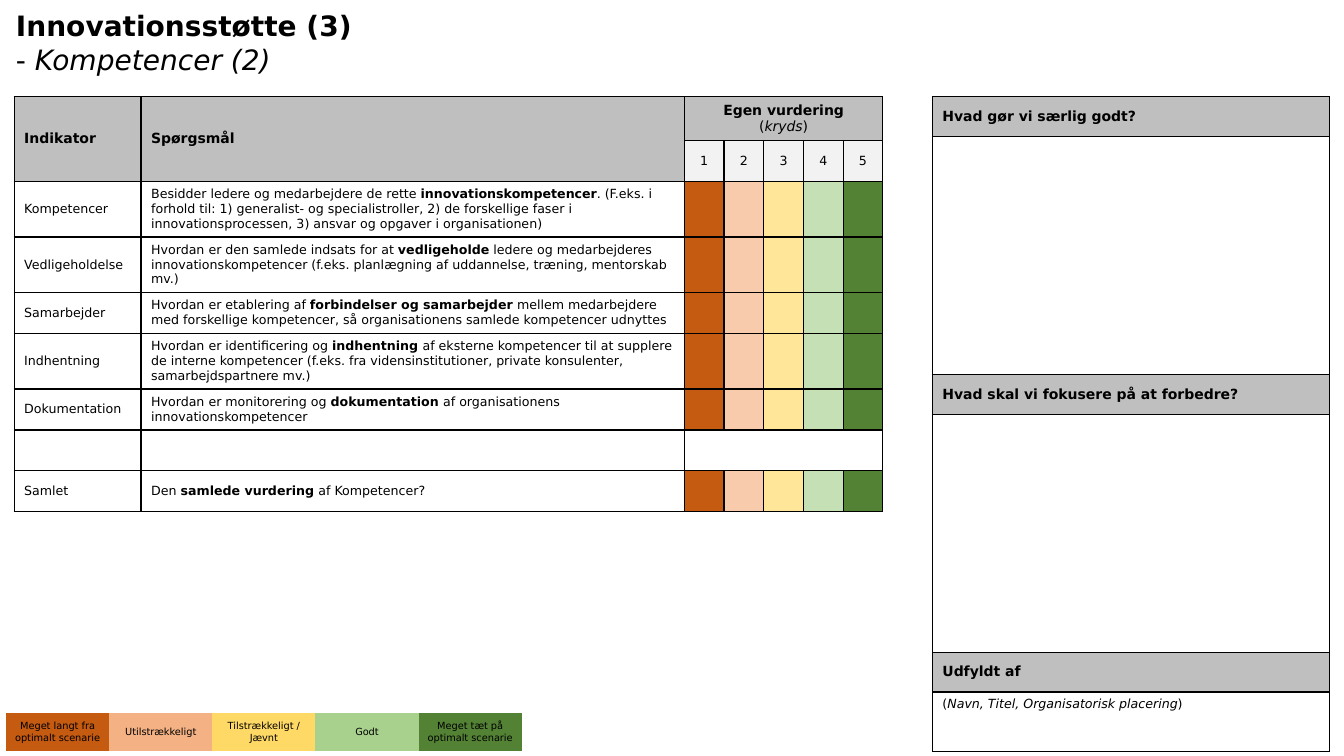
from dataclasses import dataclass

from lxml.etree import SubElement
from pptx import Presentation
from pptx.dml.color import RGBColor
from pptx.enum.text import MSO_ANCHOR, MSO_AUTO_SIZE, PP_ALIGN
from pptx.oxml.ns import qn
from pptx.util import Pt


@dataclass(frozen=True)
class Theme:
    font: str = "DejaVu Sans"
    ink: str = "000000"
    heading: str = "BFBFBF"
    scale: str = "F2F2F2"
    ratings: tuple = ("C55A11", "F8CBAD", "FFE699", "C5E0B4", "548235")
    legend: tuple = ("C55A11", "F4B183", "FFD966", "A9D18E", "548235")
    title_size: int = 20
    heading_size: int = 10
    body_size: int = 9
    legend_size: int = 7


theme = Theme()


def write(frame, text, size=theme.body_size, align=PP_ALIGN.LEFT):
    """Fill a text frame; *...* is bold, _..._ is italic, a newline starts a paragraph."""
    for number, line in enumerate(text.split("\n")):
        paragraph = frame.add_paragraph() if number else frame.paragraphs[0]
        paragraph.alignment = align
        for b, chunk in enumerate(line.split("*")):
            for i, piece in enumerate(chunk.split("_")):
                if not piece:
                    continue
                run = paragraph.add_run()
                run.text = piece
                run.font.name = theme.font
                run.font.size = Pt(size)
                run.font.bold = b % 2 == 1
                run.font.italic = i % 2 == 1
                run.font.color.rgb = RGBColor.from_string(theme.ink)


def add_grid(left, top, widths, heights, fills, sides_of):
    """Add a table; sides_of(row, column) names the cell sides (L, R, T, B) that are ruled."""
    grid = slide.shapes.add_table(len(heights), len(widths), Pt(left), Pt(top),
                                  Pt(sum(widths)), Pt(sum(heights))).table
    grid.first_row = grid.horz_banding = False
    for column, width in zip(grid.columns, widths):
        column.width = Pt(width)
    for r, height in enumerate(heights):
        grid.rows[r].height = Pt(height)
        for c in range(len(widths)):
            cell = grid.cell(r, c)
            cell.vertical_anchor = MSO_ANCHOR.MIDDLE
            properties = cell._tc.get_or_add_tcPr()
            for side in "LRTB":
                rule = SubElement(properties, qn(f"a:ln{side}"), w=str(Pt(1)))
                if side in sides_of(r, c):
                    paint = SubElement(rule, qn("a:solidFill"))
                    SubElement(paint, qn("a:srgbClr"), val=theme.ink)
                else:
                    SubElement(rule, qn("a:noFill"))
            if fills[r][c]:
                cell.fill.solid()
                cell.fill.fore_color.rgb = RGBColor.from_string(fills[r][c])
            else:
                cell.fill.background()
    return grid


deck = Presentation()
deck.slide_width, deck.slide_height = Pt(960), Pt(540)
slide = deck.slides.add_slide(deck.slide_layouts[6])

# Title
title = slide.shapes.add_textbox(Pt(4.3), Pt(2.9), Pt(714.6), Pt(55.4)).text_frame
title.word_wrap = True
title.auto_size = MSO_AUTO_SIZE.SHAPE_TO_FIT_TEXT
write(title, "*Innovationsstøtte (3)*\n- _Kompetencer (2)_", size=theme.title_size)

# Assessment table
indicators = [
    ("Kompetencer",
     "Besidder ledere og medarbejdere de rette *innovationskompetencer*. (F.eks. i forhold "
     "til: 1) generalist- og specialistroller, 2) de forskellige faser i "
     "innovationsprocessen, 3) ansvar og opgaver i organisationen)"),
    ("Vedligeholdelse",
     "Hvordan er den samlede indsats for at *vedligeholde* ledere og medarbejderes "
     "innovationskompetencer (f.eks. planlægning af uddannelse, træning, mentorskab mv.)"),
    ("Samarbejder",
     "Hvordan er etablering af *forbindelser og samarbejder *mellem medarbejdere med "
     "forskellige kompetencer, så organisationens samlede kompetencer udnyttes"),
    ("Indhentning",
     "Hvordan er identificering og *indhentning *af eksterne kompetencer til at "
     "supplere de interne kompetencer (f.eks. fra vidensinstitutioner, private "
     "konsulenter, samarbejdspartnere mv.)"),
    ("Dokumentation",
     "Hvordan er monitorering og *dokumentation *af organisationens "
     "innovationskompetencer"),
    None,
    ("Samlet", "Den *samlede vurdering *af Kompetencer?"),
]
gap_row = 2 + indicators.index(None)
assessment_fills = [[theme.heading] * 7, [theme.heading] * 2 + [theme.scale] * 5]
for indicator in indicators:
    assessment_fills.append([None, None, *(theme.ratings if indicator else [None] * 5)])


def assessment_sides(r, c):
    if r != gap_row or c < 2:
        return "LRTB"
    return "TB" + {2: "L", 6: "R"}.get(c, "")


assessment = add_grid(10.1, 69.1, [90.7, 388.1] + [28.35] * 5, [28.35] + [29.2] * 8,
                      assessment_fills, assessment_sides)
for c, heading in enumerate(["*Indikator*", "*Spørgsmål*"]):
    assessment.cell(0, c).merge(assessment.cell(1, c))
    write(assessment.cell(0, c).text_frame, heading, size=theme.heading_size)
assessment.cell(0, 2).merge(assessment.cell(0, 6))
write(assessment.cell(0, 2).text_frame, "*Egen vurdering*\n(_kryds_)",
      size=theme.heading_size, align=PP_ALIGN.CENTER)
for score in range(1, 6):
    write(assessment.cell(1, score + 1).text_frame, str(score), align=PP_ALIGN.CENTER)
for r, indicator in enumerate(indicators, start=2):
    for c, wording in enumerate(indicator or ()):
        write(assessment.cell(r, c).text_frame, wording)

# Reflection column
reflections = ["*Hvad gør vi særlig godt?*", "*Hvad skal vi fokusere på at forbedre?*",
               "*Udfyldt af*"]
reflection = add_grid(666, 69.1, [283.5], [28.35, 170.1, 28.35, 170.1, 28.35, 42.5],
                      [[theme.heading], [None]] * 3, lambda r, c: "LRTB")
for number, heading in enumerate(reflections):
    write(reflection.cell(2 * number, 0).text_frame, heading, size=theme.heading_size)
signature = reflection.cell(5, 0)
signature.vertical_anchor = MSO_ANCHOR.TOP
write(signature.text_frame, "(_Navn, Titel, Organisatorisk placering_)")

# Legend of the rating scale
meanings = ["Meget langt fra optimalt scenarie", "Utilstrækkeligt", "Tilstrækkeligt / Jævnt",
            "Godt", "Meget tæt på optimalt scenarie"]
legend = add_grid(4.3, 509.2, [73.7] * 5, [27.6], [theme.legend], lambda r, c: "")
for c, meaning in enumerate(meanings):
    cell = legend.cell(0, c)
    cell.margin_left = cell.margin_right = Pt(5)
    cell.margin_top = cell.margin_bottom = Pt(0)
    write(cell.text_frame, meaning, size=theme.legend_size, align=PP_ALIGN.CENTER)

deck.save("out.pptx")
